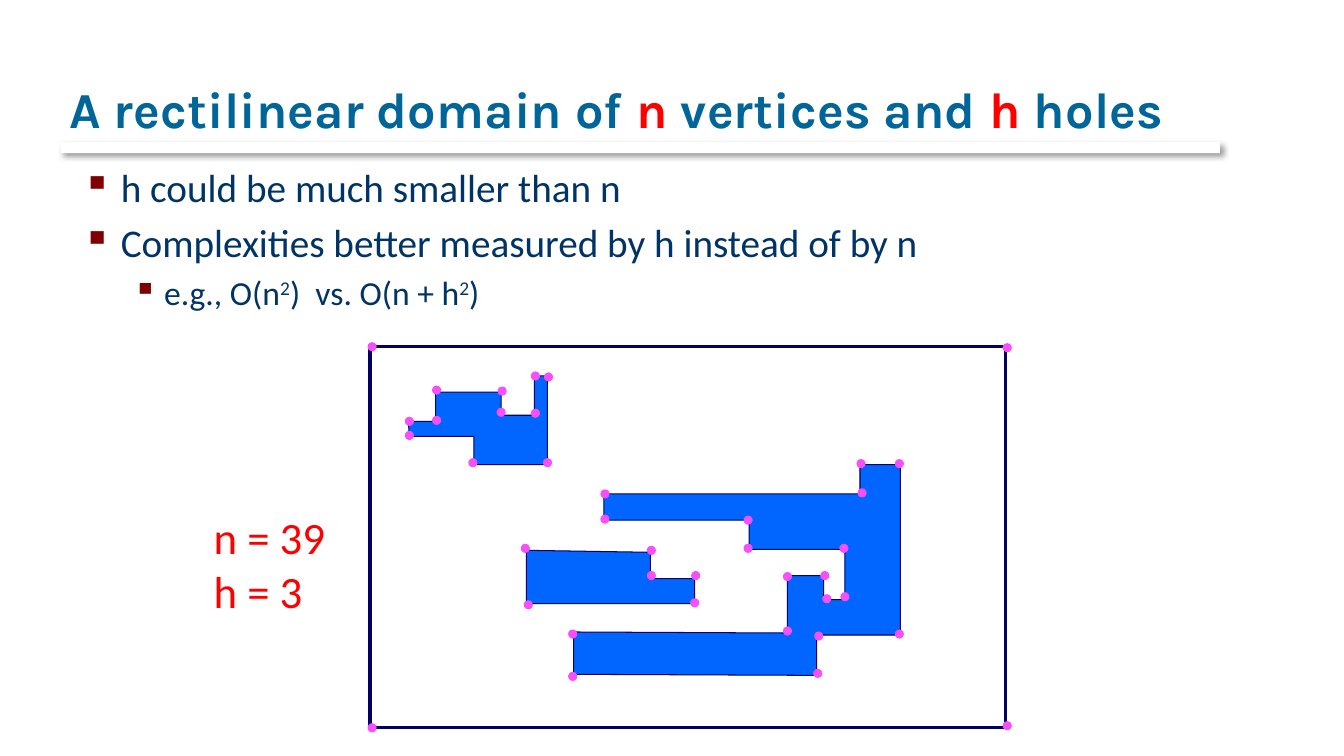
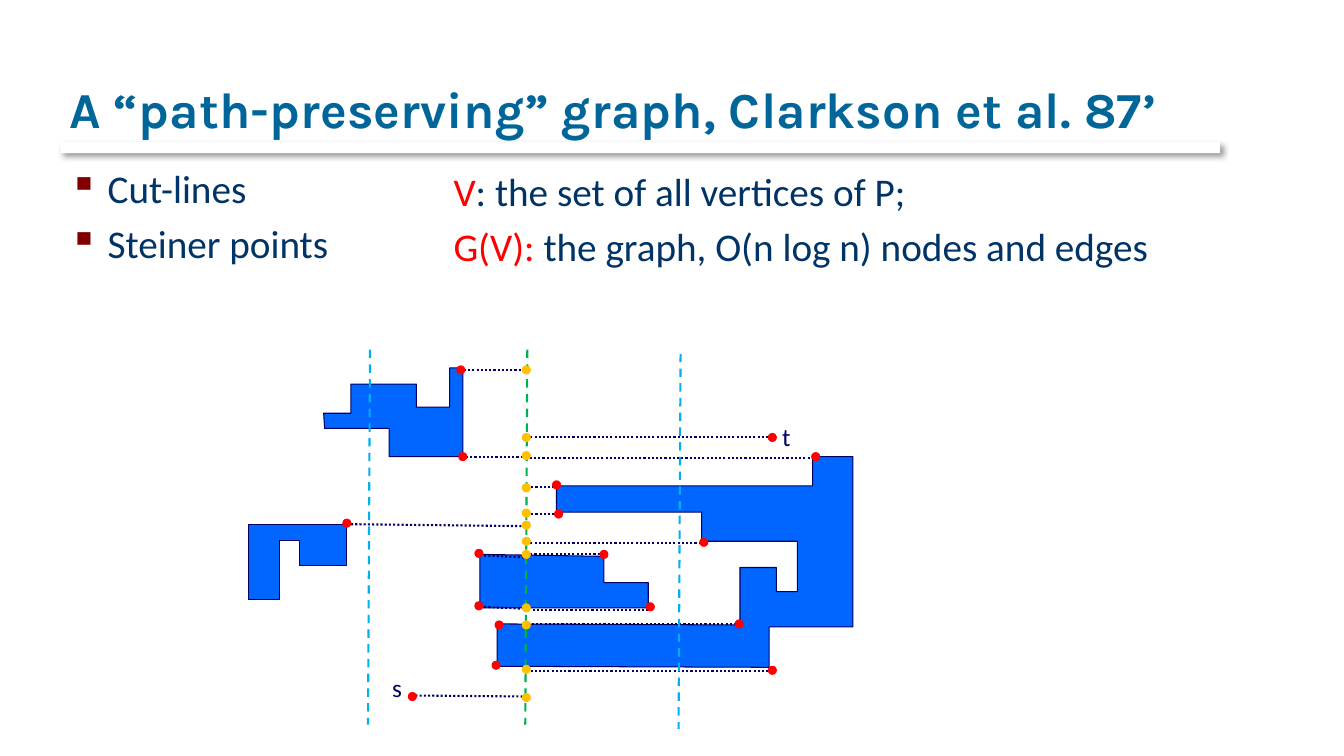
from dataclasses import dataclass
from lxml.etree import SubElement
from pptx import Presentation
from pptx.dml.color import RGBColor
from pptx.enum.dml import MSO_LINE
from pptx.enum.shapes import MSO_CONNECTOR, MSO_SHAPE
from pptx.enum.text import MSO_ANCHOR, MSO_AUTO_SIZE
from pptx.oxml.ns import qn
from pptx.util import Inches, Pt


@dataclass(frozen=True)
class Theme:
    title: str = "006699"
    body: str = "003366"
    bullet: str = "800000"
    accent: str = "FF0000"
    outline: str = "000066"
    hole: str = "0066FF"
    vertex: str = "F84EFC"
    steiner: str = "FFC000"
    main_cut: str = "00B050"
    side_cut: str = "00B0F0"
    band: str = "FFFFFF"
    shadow: str = "000000"
    title_font: str = "Karla"
    body_font: str = "Calibri"
    title_size: float = 36
    count_size: float = 32
    body_size: float = 28
    detail_size: float = 24
    label_size: float = 18


THEME = Theme()


@dataclass
class Para:
    spans: list
    size: float = THEME.body_size
    color: str = THEME.body
    font: str = THEME.body_font
    bold: bool = False
    tracking: int = 0
    indent: tuple = ()
    gap: float = 0


def bullet(*spans, size=THEME.body_size, indent=(0.38, 0.38)):
    return Para(spans, size, indent=indent, gap=size * 0.2)


def apply(target, values):
    for name, value in values.items():
        setattr(target, name, value)


def shift(points, dx, dy):
    return [(x + dx, y + dy) for x, y in points]


class Painter:
    def __init__(self, theme):
        self.theme = theme
        self.deck = Presentation()
        apply(self.deck, {"slide_width": Inches(13.33), "slide_height": Inches(7.5)})
        self.page = None

    def new_page(self, *title_spans):
        self.page = self.deck.slides.add_slide(self.deck.slide_layouts[6])
        self.title_band()
        title = Para(title_spans, self.theme.title_size, self.theme.title,
                     self.theme.title_font, bold=True, tracking=10)
        self.text((0.59, 0.17, 11.33, 1.25), [title], anchor=MSO_ANCHOR.BOTTOM)

    def title_band(self):
        band = self.shape(MSO_SHAPE.RECTANGLE, (0.6, 1.41, 11.5, 0.11), self.theme.band)
        effects = band._element.spPr.find(qn("a:effectLst"))
        shadow = SubElement(effects, qn("a:outerShdw"), blurRad=str(Pt(4)),
                            dist=str(Pt(3)), dir="2700000", algn="tl", rotWithShape="0")
        color = SubElement(shadow, qn("a:srgbClr"), val=self.theme.shadow)
        SubElement(color, qn("a:alpha"), val="40000")

    def paint(self, shape, fill=None, line=None, width=0.75):
        shape.shadow.inherit = False
        if fill:
            shape.fill.solid()
            shape.fill.fore_color.rgb = RGBColor.from_string(fill)
        else:
            shape.fill.background()
        if line:
            shape.line.color.rgb = RGBColor.from_string(line)
            shape.line.width = Pt(width)
        else:
            shape.line.fill.background()
        return shape

    def shape(self, kind, bounds, fill=None, line=None, width=0.75):
        shape = self.page.shapes.add_shape(kind, *map(Inches, bounds))
        return self.paint(shape, fill, line, width)

    def dots(self, centers, color, size=0.08):
        for x, y in centers:
            bounds = (x - size / 2, y - size / 2, size, size)
            self.shape(MSO_SHAPE.OVAL, bounds, color, color)

    def hole(self, points):
        corners = [(Inches(x), Inches(y)) for x, y in points]
        builder = self.page.shapes.build_freeform(*corners[0], scale=1.0)
        builder.add_line_segments(corners[1:], close=True)
        self.paint(builder.convert_to_shape(), self.theme.hole, self.theme.outline)

    def line(self, start, end, color, dash):
        line = self.page.shapes.add_connector(
            MSO_CONNECTOR.STRAIGHT, *map(Inches, (*start, *end)))
        line.line.color.rgb = RGBColor.from_string(color)
        apply(line.line, {"width": Pt(1.5), "dash_style": dash})
        SubElement(line._element.spPr, qn("a:effectLst"))

    def text(self, bounds, paras, anchor=MSO_ANCHOR.TOP, wrap=True):
        frame = self.page.shapes.add_textbox(*map(Inches, bounds)).text_frame
        fit = MSO_AUTO_SIZE.NONE if wrap else MSO_AUTO_SIZE.SHAPE_TO_FIT_TEXT
        apply(frame, {"word_wrap": wrap, "auto_size": fit, "vertical_anchor": anchor})
        for index, item in enumerate(paras):
            para = frame.add_paragraph() if index else frame.paragraphs[0]
            self.fill_para(para, item)

    def fill_para(self, para, item):
        para.space_before = Pt(item.gap)
        if item.indent:
            left, hang = item.indent
            props = para._p.get_or_add_pPr()
            props.set("marL", str(Inches(left)))
            props.set("indent", str(-Inches(hang)))
            SubElement(SubElement(props, qn("a:buClr")), qn("a:srgbClr"),
                       val=self.theme.bullet)
            SubElement(props, qn("a:buChar"), char="▪")
        for span in item.spans:
            content, color, raised = span if isinstance(span, tuple) else (span, None, 0)
            run = para.add_run()
            run.text = content
            apply(run.font, {"name": item.font, "size": Pt(item.size), "bold": item.bold})
            run.font.color.rgb = RGBColor.from_string(color or item.color)
            for name, value in {"baseline": raised, "spc": item.tracking}.items():
                if value:
                    run._r.get_or_add_rPr().set(name, str(value))


def red(content):
    return content, THEME.accent, 0


SQUARED = ("2", None, 30000)

STEPPED_HOLE = [
    (4.05, 4.18), (4.06, 4.33), (4.7, 4.33), (4.7, 4.61), (5.43, 4.61), (5.43, 3.73),
    (5.3, 3.73), (5.3, 4.12), (4.97, 4.12), (4.97, 3.89), (4.32, 3.89), (4.32, 4.18)]
SMALL_HOLE = [
    (5.22, 5.46), (6.45, 5.48), (6.45, 5.74), (6.89, 5.74), (6.89, 5.99), (5.22, 5.99)]
HOOK_HOLE = [
    (2.46, 5.2), (3.44, 5.2), (3.44, 5.61), (2.97, 5.61), (2.97, 5.36), (2.77, 5.36),
    (2.77, 5.95), (2.46, 5.95)]


def large_hole(foot_left):
    return [
        (5.99, 4.9), (5.99, 5.16), (7.43, 5.16), (7.43, 5.45), (8.38, 5.45),
        (8.38, 5.95), (8.17, 5.95), (8.17, 5.71), (7.81, 5.71), (7.81, 6.28),
        (foot_left, 6.27), (foot_left, 6.69), (8.1, 6.7), (8.1, 6.3), (8.93, 6.3),
        (8.93, 4.61), (8.53, 4.61), (8.53, 4.9)]


def domain_page(painter):
    theme = painter.theme
    painter.new_page("A rectilinear domain of ", red("n"), " vertices and ",
                     red("h"), " holes")
    painter.text((0.72, 1.57, 8.91, 2.15), [
        bullet("h could be much smaller than n"),
        bullet("Complexities better measured by h instead of by n"),
        bullet("e.g., O(n", SQUARED, ")  vs. O(n + h", SQUARED, ")",
               size=theme.detail_size, indent=(0.81, 0.31))])
    painter.shape(MSO_SHAPE.RECTANGLE, (3.67, 3.44, 6.3, 3.78),
                  line=theme.outline, width=2.25)
    for points in (STEPPED_HOLE, SMALL_HOLE, large_hole(5.69)):
        painter.hole(points)
    painter.text((2.02, 5.01, 1.39, 1.18), [
        Para([count], theme.count_size, theme.accent) for count in ("n = 39", "h = 3")],
        wrap=False)
    stepped_vertices = [
        (4.06, 4.32), (4.06, 4.18), (4.33, 4.17), (4.33, 3.87), (4.98, 3.88),
        (4.97, 4.09), (5.31, 4.1), (5.31, 3.73), (5.44, 3.74), (4.69, 4.59), (5.43, 4.59)]
    large_vertices = [
        (6, 4.9), (8.55, 4.89), (8.54, 4.6), (8.92, 4.6), (8.92, 6.29), (8.12, 6.31),
        (8.38, 5.92), (8.2, 5.94), (8.18, 5.71), (7.81, 5.72), (7.81, 6.26),
        (5.68, 6.29), (5.68, 6.71), (8.11, 6.68), (6, 5.15), (7.42, 5.16),
        (7.42, 5.44), (8.37, 5.44)]
    small_vertices = [
        (6.9, 5.71), (6.89, 5.98), (6.46, 5.71), (6.46, 5.46), (5.21, 5.44), (5.24, 6)]
    frame_corners = [(3.69, 7.22), (3.69, 3.44), (9.99, 3.45), (9.99, 7.2)]
    for vertices in (stepped_vertices, large_vertices, small_vertices, frame_corners):
        painter.dots(vertices, theme.vertex)


def graph_page(painter):
    theme = painter.theme
    cut_x = 5.22
    painter.new_page("A “path-preserving” graph, Clarkson et al. 87’")
    painter.text((0.59, 1.58, 3.6, 1.22), [bullet("Cut-lines"), bullet("Steiner points")])
    gap = theme.body_size * 0.2
    painter.text((4.4, 1.61, 7.77, 1.22), [
        Para([red("V"), ": the set of all vertices of P;"], gap=gap),
        Para([red("G(V): "), "the graph, O(n log n) nodes and edges"], gap=gap)])
    for points in (shift(STEPPED_HOLE, -0.84, -0.08), shift(SMALL_HOLE, -0.46, 0.04),
                   shift(large_hole(5.4), -0.47, -0.08), HOOK_HOLE):
        painter.hole(points)
    for label, bounds in (("s", (3.79, 6.62, 0.3, 0.4)), ("t", (7.66, 4.13, 0.29, 0.4))):
        painter.text(bounds, [Para([label], theme.label_size, theme.outline)], wrap=False)

    def cut_line(x, top, color):
        painter.line((x, top), (x - 0.02, top + 3.72), color, MSO_LINE.DASH)

    cut_line(5.23, 3.47, theme.main_cut)
    projections = [
        (4.56, 3.67, 3.67), (7.66, 4.34, 4.34), (4.58, 4.53, 4.53), (8.03, 4.54, 4.54),
        (5.54, 4.83, 4.83), (5.54, 5.1, 5.1), (3.44, 5.2, 5.22), (6.95, 5.39, 5.39),
        (5.99, 5.5, 5.5), (4.76, 5.51, 5.53), (4.76, 6.02, 6.04), (6.43, 6.05, 6.05),
        (7.3, 6.19, 6.19), (7.62, 6.66, 6.66), (4.12, 6.9, 6.91)]
    for x, y, cut_y in projections:
        painter.line((x, y), (cut_x, cut_y), theme.outline, MSO_LINE.ROUND_DOT)
    painter.dots([
        (4.09, 6.91), (7.66, 4.34), (8.09, 4.53), (5.52, 4.81), (5.54, 5.1), (5.99, 5.5),
        (6.98, 5.38), (6.45, 6.02), (7.33, 6.19), (4.57, 3.67), (4.59, 4.53),
        (3.44, 5.19), (4.75, 6.01), (4.75, 5.49), (4.95, 6.2), (4.92, 6.6),
        (7.66, 6.65)], theme.accent)
    steiner_heights = (3.67, 4.34, 4.52, 4.84, 5.09, 5.21, 5.37, 5.5, 6.03, 6.2, 6.64, 6.92)
    painter.dots([(cut_x, y) for y in steiner_heights], theme.steiner)
    cut_line(6.75, 3.51, theme.side_cut)
    cut_line(3.67, 3.47, theme.side_cut)


def main():
    painter = Painter(THEME)
    domain_page(painter)
    graph_page(painter)
    painter.deck.save("out.pptx")


if __name__ == "__main__":
    main()
